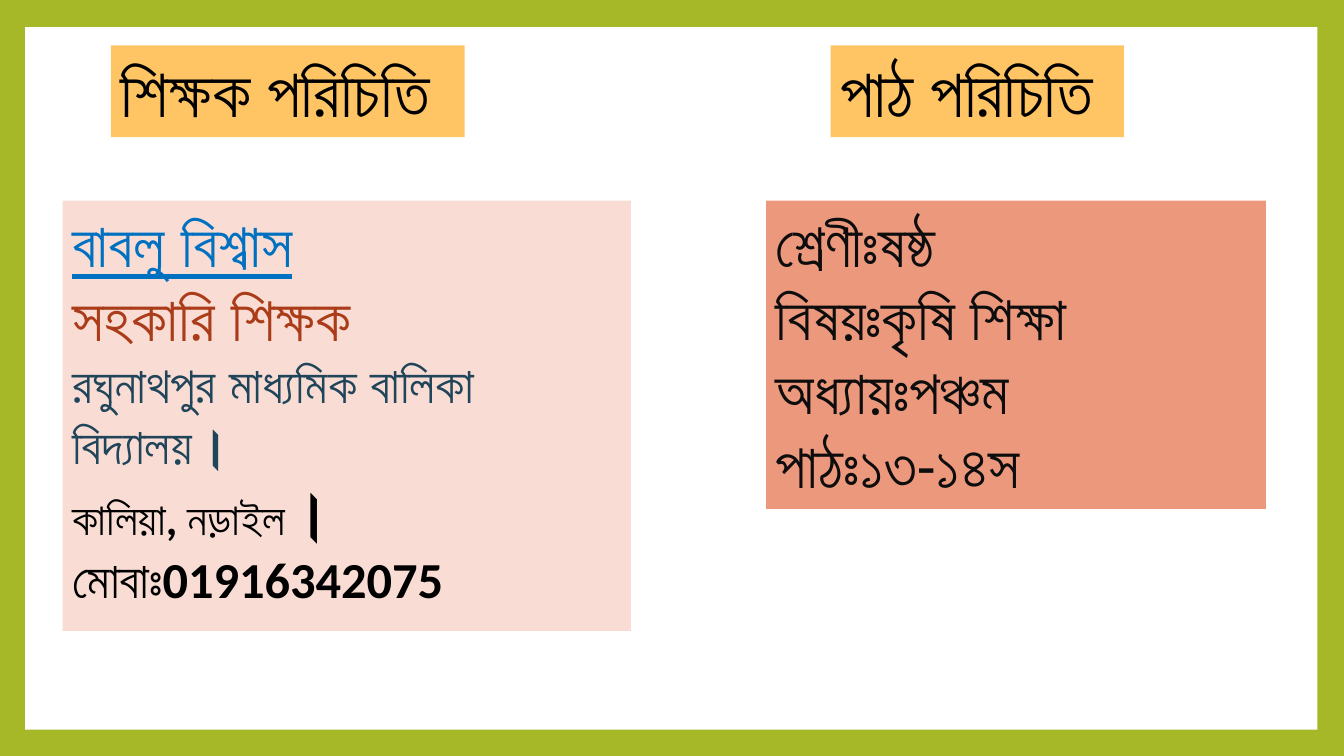
from pptx import Presentation
from pptx.dml.color import RGBColor as Rgb
from pptx.enum.shapes import MSO_SHAPE as Shape
from pptx.enum.text import MSO_ANCHOR as Anchor
from pptx.util import Inches, Pt

WIDE, HIGH = Inches(13.333), Inches(7.5)
HEAD_TOP, HEAD_HIGH = 6, 12.13
CARD_TOP = 26.53
NUKTA = chr(0x09BC)
DOTTED = {"য": chr(0x09DF), "ড": chr(0x09DC)}


def fuse(text):
    """Join each base letter and its dot into the single dotted letter."""
    for base, letter in DOTTED.items():
        text = text.replace(base + NUKTA, letter)
    return text


def paint(fill, color):
    """Give a fill one solid colour."""
    fill.solid()
    fill.fore_color.rgb = Rgb.from_string(color)


def place(left, top, width, height):
    """Turn percentages of the slide into lengths."""
    return (int(WIDE * left / 100), int(HIGH * top / 100),
            int(WIDE * width / 100), int(HIGH * height / 100))


def panel(slide, area, color):
    """Draw a plain rectangle without an outline."""
    shape = slide.shapes.add_shape(Shape.RECTANGLE, *place(*area))
    shape.shadow.inherit = False
    shape.line.fill.background()
    paint(shape.fill, color)


def style(font, size, color, bold):
    """Set the look of a font."""
    font.name = "Calibri"
    font.size = Pt(size)
    font.bold = bold
    font.color.rgb = Rgb.from_string(color)


def card(slide, area, color, lines, bold=False):
    """Add a filled text box and return its paragraphs."""
    box = slide.shapes.add_textbox(*place(*area))
    paint(box.fill, color)
    frame = box.text_frame
    frame.word_wrap = True
    frame.vertical_anchor = Anchor.TOP
    for index, (text, size, ink) in enumerate(lines):
        para = frame.add_paragraph() if index else frame.paragraphs[0]
        style(para.font, size, ink, bold)
        para.add_run().text = fuse(text)
    return frame.paragraphs


def title(slide, left, width, text):
    """Add a heading above a card."""
    card(slide, (left, HEAD_TOP, width, HEAD_HIGH), "FFC565",
         [(text, 48, "000000")])


def teacher(slide):
    """Add the card that presents the teacher."""
    lines = [
        ("বাবলু বিশ্বাস", 44, "0070C0"),
        ("সহকারি শিক্ষক", 44, "AB3C19"),
        ("রঘুনাথপুর মাধ্যমিক বালিকা বিদ্যালয়।", 36, "20455A"),
        ("কালিয়া, নড়াইল", 32, "000000"),
        ("মোবাঃ01916342075", 36, "000000"),
    ]
    paras = card(slide, (4.65, CARD_TOP, 42.3, 56.93), "F9DDD4", lines, True)
    paras[0].font.underline = True
    stop = paras[3].add_run()
    stop.text = "।"
    stop.font.size = Pt(44)


def lesson(slide):
    """Add the card that presents the lesson."""
    texts = ["শ্রেণীঃষষ্ঠ", "বিষয়ঃকৃষি শিক্ষা", "অধ্যায়ঃপঞ্চম", "পাঠঃ১৩-১৪স"]
    card(slide, (57, CARD_TOP, 37.2, 40.8), "EC987D",
         [(text, 44, "0D0D0D") for text in texts])


def main():
    """Build the slide and save it."""
    deck = Presentation()
    deck.slide_width, deck.slide_height = WIDE, HIGH
    slide = deck.slides.add_slide(deck.slide_layouts[6])
    paint(slide.background.fill, "A6B727")
    panel(slide, (1.88, 3.6, 96.15, 92.93), "FFFFFF")
    teacher(slide)
    lesson(slide)
    title(slide, 8.25, 26.33, "শিক্ষক পরিচিতি")
    title(slide, 61.8, 21.83, "পাঠ পরিচিতি")
    deck.save("out.pptx")


if __name__ == "__main__":
    main()
